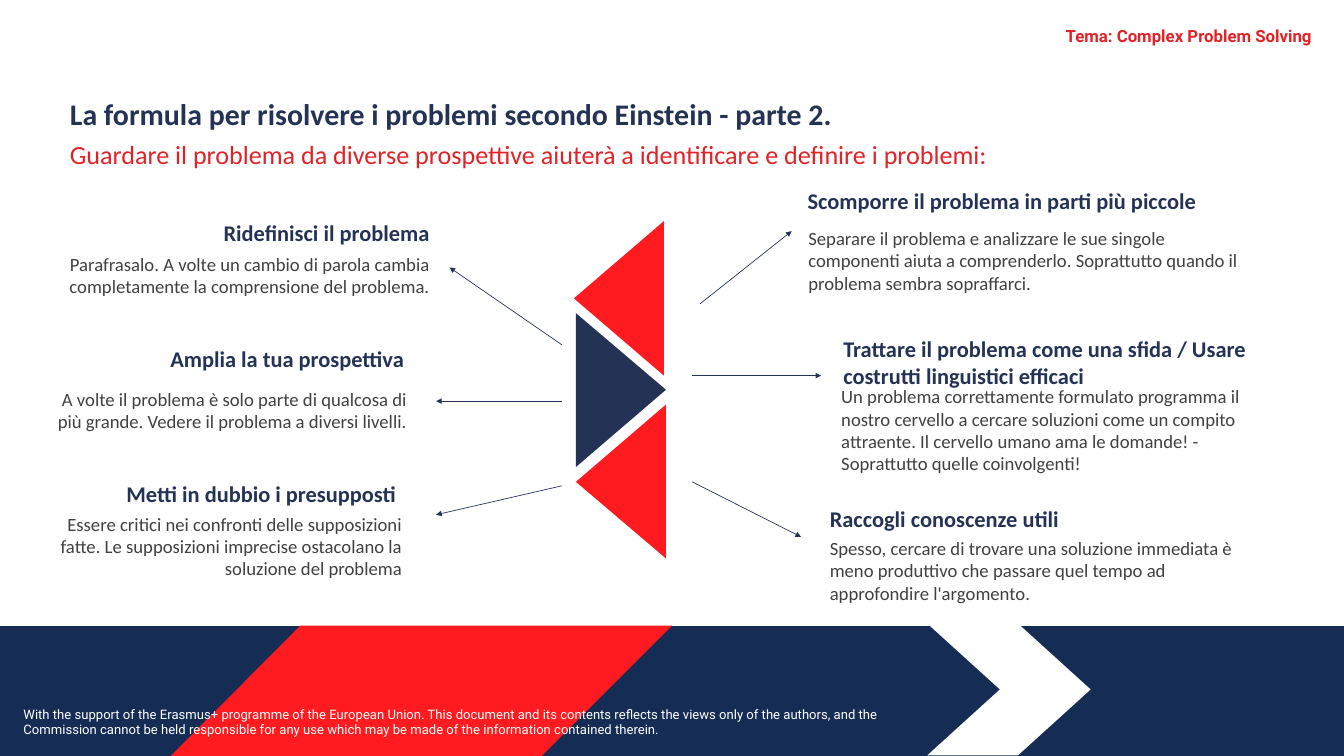
"""Build the slide on Einstein's problem-solving formula, part 2."""
from typing import NamedTuple

from pptx import Presentation
from pptx.dml.color import RGBColor
from pptx.enum.shapes import MSO_CONNECTOR
from pptx.enum.text import MSO_ANCHOR, MSO_AUTO_SIZE, PP_ALIGN
from pptx.oxml import parse_xml
from pptx.oxml.ns import nsdecls
from pptx.util import Emu, Pt

PX = 9144
NAVY, BAND, RED, BRIGHT_RED = "243255", "152D54", "E12227", "FF1B20"
WHITE, GREY = "FFFFFF", "404040"
LEFT, RIGHT = PP_ALIGN.LEFT, PP_ALIGN.RIGHT


class Box(NamedTuple):
    left: int
    top: int
    width: int
    height: int


class Style(NamedTuple):
    size: int
    color: str
    bold: bool = False
    name: str = "Calibri"


class Note(NamedTuple):
    heading: str
    heading_box: Box
    body: str
    body_box: Box
    align: PP_ALIGN


class Outline(NamedTuple):
    color: str
    points: list[tuple[int, int]]


class Arrow(NamedTuple):
    begin_x: int
    begin_y: int
    end_x: int
    end_y: int


TITLE = Style(32, NAVY, True)
SUBTITLE = Style(28, RED)
HEADING = Style(24, NAVY, True)
BODY = Style(20, GREY)
TOPIC = Style(18, RED, True, "Roboto")
FOOTER = Style(14, WHITE, False, "Roboto")

OUTLINES = [
    Outline(BAND, [(0, 931), (2000, 931), (2000, 1125), (0, 1125)]),
    Outline(WHITE, [(1380, 928), (1515, 928), (1623, 1026), (1515, 1124), (1380, 1124), (1488, 1026)]),
    Outline(BRIGHT_RED, [(447, 931), (1000, 931), (806, 1125), (254, 1125)]),
    Outline(BRIGHT_RED, [(854, 444), (988, 329), (988, 559)]),
    Outline(BRIGHT_RED, [(857, 717), (991, 602), (991, 831)]),
    Outline(NAVY, [(991, 580), (857, 695), (857, 466)]),
]

NOTES = [
    Note("Scomporre il problema in parti più piccole", Box(1192, 274, 680, 50),
         "Separare il problema e analizzare le sue singole componenti aiuta a comprenderlo. "
         "Soprattutto quando il problema sembra sopraffarci.", Box(1193, 332, 662, 111), LEFT),
    Note("Trattare il problema come una sfida / Usare costrutti linguistici efficaci",
         Box(1245, 493, 662, 91),
         "Un problema correttamente formulato programma il nostro cervello a cercare soluzioni "
         "come un compito attraente. Il cervello umano ama le domande! - Soprattutto quelle "
         "coinvolgenti!", Box(1242, 567, 684, 145), LEFT),
    Note("Raccogli conoscenze utili", Box(1225, 746, 440, 50),
         "Spesso, cercare di trovare una soluzione immediata è meno produttivo che passare quel "
         "tempo ad approfondire l'argomento.", Box(1225, 793, 647, 111), LEFT),
    Note("Ridefinisci il problema", Box(80, 321, 569, 50),
         "Parafrasalo. A volte un cambio di parola cambia completamente la comprensione del "
         "problema.", Box(40, 371, 609, 77), RIGHT),
    Note("Amplia la tua prospettiva", Box(50, 508, 561, 50),
         "A volte il problema è solo parte di qualcosa di più grande. Vedere il problema a "
         "diversi livelli.", Box(54, 572, 561, 77), RIGHT),
    Note("Metti in dubbio i presupposti", Box(142, 710, 457, 50),
         "Essere critici nei confronti delle supposizioni fatte. Le supposizioni imprecise "
         "ostacolano la soluzione del problema", Box(54, 757, 554, 111), RIGHT),
]

ARROWS = [
    Arrow(1042, 452, 1178, 344),
    Arrow(1030, 559, 1222, 559),
    Arrow(1030, 717, 1192, 799),
    Arrow(836, 513, 669, 398),
    Arrow(836, 597, 649, 597),
    Arrow(836, 723, 649, 766),
]


def rgb(value: str) -> RGBColor:
    """Turn a hex string into a colour."""
    return RGBColor.from_string(value)


def set_values(target, values: dict) -> None:
    """Set each named attribute on the target."""
    for name, value in values.items():
        setattr(target, name, value)


def format_frame(frame, anchor, inset: tuple[int, int] = (10, 5)) -> None:
    """Set wrapping, anchor and insets of a text frame."""
    across, down = (Emu(length * PX) for length in inset)
    set_values(frame, {
        "word_wrap": True, "auto_size": MSO_AUTO_SIZE.NONE, "vertical_anchor": anchor,
        "margin_left": across, "margin_right": across, "margin_top": down, "margin_bottom": down,
    })


def write(para, text: str, style: Style, align: PP_ALIGN = LEFT) -> None:
    """Write one styled span into a paragraph."""
    para.alignment = align
    span = para.add_run()
    span.text = text
    set_values(span.font, {"size": Pt(style.size), "bold": style.bold, "name": style.name})
    span.font.color.rgb = rgb(style.color)


def add_text(page, box: Box, text: str, style: Style, align: PP_ALIGN = LEFT,
             anchor=MSO_ANCHOR.MIDDLE, inset: tuple[int, int] = (10, 5)) -> None:
    """Add a text box with one paragraph."""
    frame = page.shapes.add_textbox(*(Emu(length * PX) for length in box)).text_frame
    format_frame(frame, anchor, inset)
    write(frame.paragraphs[0], text, style, align)


def add_outline(page, outline: Outline) -> None:
    """Draw a closed filled shape."""
    start, *others = outline.points
    builder = page.shapes.build_freeform(*start, scale=PX)
    builder.add_line_segments(others, close=True)
    shape = builder.convert_to_shape()
    shape.shadow.inherit = False
    shape.fill.solid()
    shape.fill.fore_color.rgb = rgb(outline.color)
    shape.line.fill.background()


def add_arrow(page, arrow: Arrow) -> None:
    """Draw a thin arrow with a triangular head at its end."""
    ends = (Emu(length * PX) for length in arrow)
    connector = page.shapes.add_connector(MSO_CONNECTOR.STRAIGHT, *ends)
    connector.line.color.rgb = rgb(NAVY)
    connector.line.width = Pt(0.75)
    connector.line._get_or_add_ln().append(
        parse_xml(f'<a:tailEnd {nsdecls("a")} type="triangle"/>'))
    connector._element.spPr.append(parse_xml(f'<a:effectLst {nsdecls("a")}/>'))


def fill_title(page) -> None:
    """Place the title placeholder and write its two lines."""
    title = page.shapes.title
    box = Box(104, 143, 1813, 111)
    set_values(title, {name: Emu(length * PX) for name, length in box._asdict().items()})
    frame = title.text_frame
    format_frame(frame, MSO_ANCHOR.TOP, (0, 0))
    write(frame.paragraphs[0], "La formula per risolvere i problemi secondo Einstein - parte 2.", TITLE)
    frame.paragraphs[0].space_after = Pt(7)
    write(frame.add_paragraph(),
          "Guardare il problema da diverse prospettive aiuterà a identificare e definire i problemi:",
          SUBTITLE)


def main() -> None:
    """Build and save the deck."""
    deck = Presentation()
    set_values(deck, {"slide_width": Emu(2000 * PX), "slide_height": Emu(1125 * PX)})
    page = deck.slides.add_slide(deck.slide_layouts[5])
    fill_title(page)
    for outline in OUTLINES:
        add_outline(page, outline)
    for note in NOTES:
        add_text(page, note.body_box, note.body, BODY, note.align)
        add_text(page, note.heading_box, note.heading, HEADING, note.align)
    for arrow in ARROWS:
        add_arrow(page, arrow)
    add_text(page, Box(25, 1046, 1375, 57),
             "With the support of the Erasmus+ programme of the European Union. This document and "
             "its contents reflects the views only of the authors, and the Commission cannot be held "
             "responsible for any use which may be made of the information contained therein.",
             FOOTER, anchor=MSO_ANCHOR.TOP)
    add_text(page, Box(900, 37, 1052, 32), "Tema: Complex Problem Solving", TOPIC, RIGHT,
             MSO_ANCHOR.TOP, (0, 1))
    deck.save("out.pptx")


if __name__ == "__main__":
    main()
